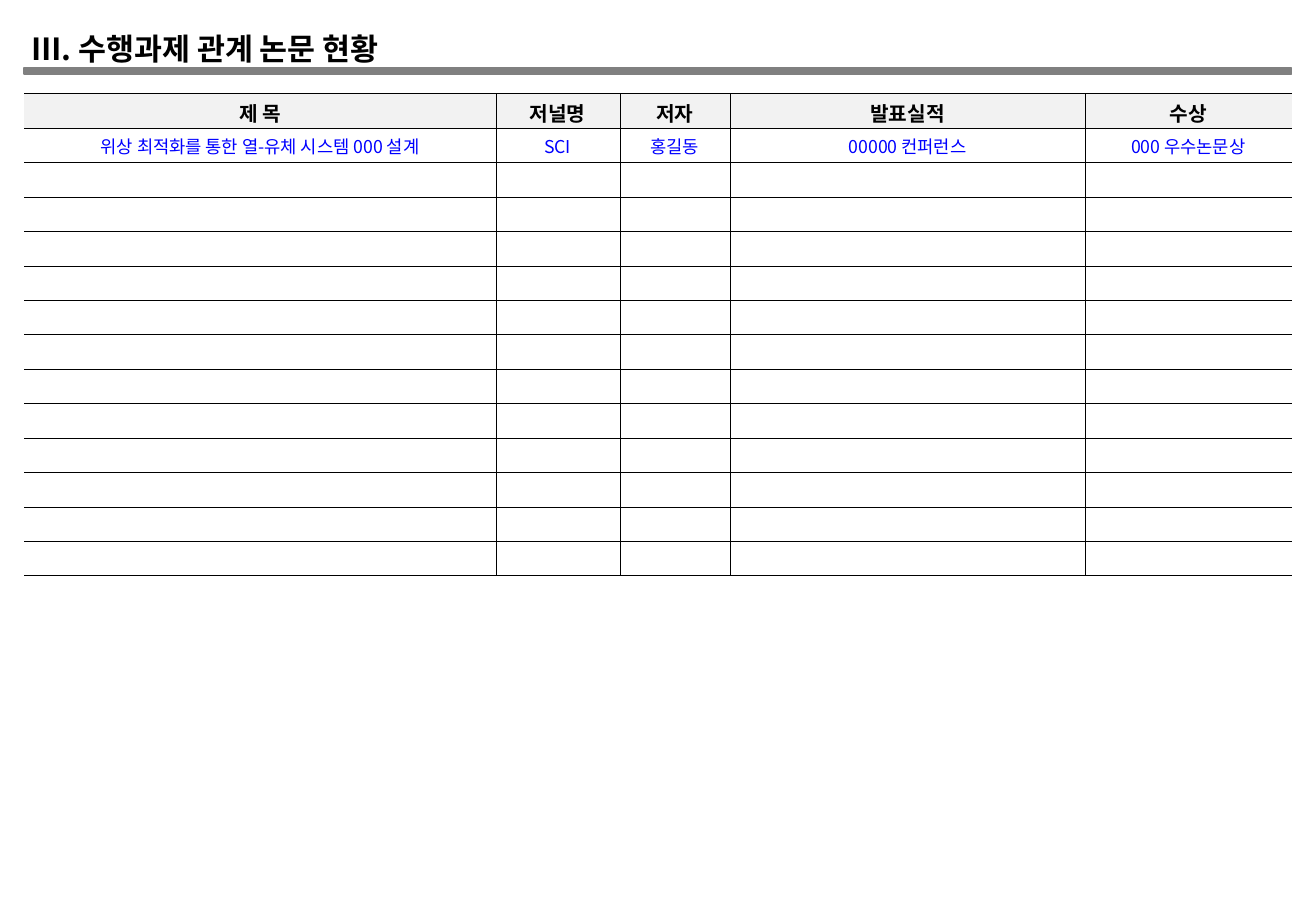
from lxml import etree
from pptx import Presentation
from pptx.dml.color import RGBColor
from pptx.enum.shapes import MSO_SHAPE
from pptx.enum.text import MSO_ANCHOR, PP_ALIGN
from pptx.oxml.ns import qn
from pptx.util import Inches, Pt

RECTANGLE = MSO_SHAPE.RECTANGLE
MIDDLE = MSO_ANCHOR.MIDDLE
CENTER = PP_ALIGN.CENTER

BLACK = RGBColor(0x00, 0x00, 0x00)
BLUE = RGBColor(0x00, 0x00, 0xFF)
GRAY = RGBColor(0x80, 0x80, 0x80)
PALE_GRAY = RGBColor(0xF2, 0xF2, 0xF2)
FONT_NAME = "Noto Sans CJK KR"

SLIDE_WIDTH, SLIDE_HEIGHT = Inches(10.83), Inches(7.5)
MARGIN = Inches(0.2)
CONTENT_WIDTH = SLIDE_WIDTH - 2 * MARGIN
HEADING_BOX = (MARGIN, Inches(0.05), CONTENT_WIDTH, Inches(0.56))
TABLE_BOX = (MARGIN, Inches(0.77), CONTENT_WIDTH, Inches(3.97))
BAR_HEIGHT = Inches(0.05)
CELL_INSET = Inches(0.04)

HEADING = "Ⅲ. 수행과제 관계 논문 현황"
HEADERS = ["제 목", "저널명", "저자", "발표실적", "수상"]
PAPERS = [["위상 최적화를 통한 열-유체 시스템 000 설계", "SCI", "홍길동",
           "00000 컨퍼런스", "000 우수논문상"]]
COLUMN_SHARES = [3.88, 1.02, 0.91, 2.92, 1.7]
ROW_COUNT = 14


def style_font(font, size, color, bold):
    font.name = FONT_NAME
    font.size = Pt(size)
    font.bold = bold
    font.color.rgb = color
    east_asian = etree.Element(qn("a:ea"), typeface=FONT_NAME)
    font._element.find(qn("a:latin")).addnext(east_asian)


def add_heading(slide, box):
    left, top, width, height = box
    bar_top = top + height - BAR_HEIGHT
    bar = slide.shapes.add_shape(RECTANGLE, left, bar_top, width, BAR_HEIGHT)
    bar.shadow.inherit = False
    bar.fill.solid()
    bar.fill.fore_color.rgb = GRAY
    bar.line.color.rgb = GRAY
    bar.line.width = Pt(1)

    title = slide.shapes.add_textbox(left - CELL_INSET, top, width, height - BAR_HEIGHT)
    title.text_frame.word_wrap = True
    paragraph = title.text_frame.paragraphs[0]
    paragraph.text = HEADING
    paragraph.line_spacing = 1.5
    style_font(paragraph.font, 18, BLACK, True)


def set_borders(cell, widths):
    properties = cell._tc.get_or_add_tcPr()
    for position, (side, width) in enumerate(widths.items()):
        line = etree.Element(qn(f"a:ln{side}"), w=str(Pt(width)))
        if width:
            fill = etree.SubElement(line, qn("a:solidFill"))
            etree.SubElement(fill, qn("a:srgbClr"), val=str(BLACK))
        else:
            etree.SubElement(line, qn("a:noFill"))
        properties.insert(position, line)


def fill_cell(cell, text, is_header):
    cell.margin_left = cell.margin_right = CELL_INSET
    cell.margin_top = cell.margin_bottom = CELL_INSET
    cell.vertical_anchor = MIDDLE
    if is_header:
        cell.fill.solid()
        cell.fill.fore_color.rgb = PALE_GRAY
    else:
        cell.fill.background()
    paragraph = cell.text_frame.paragraphs[0]
    paragraph.alignment = CENTER
    if text:
        paragraph.text = text
        paragraph.space_before = paragraph.space_after = Pt(2)
        style_font(paragraph.font, 12 if is_header else 10.5,
                   BLACK if is_header else BLUE, is_header)
    else:
        etree.SubElement(paragraph._p, qn("a:endParaRPr"), sz="1000")


def add_paper_table(slide, box):
    left, top, width, height = box
    column_count = len(HEADERS)
    table = slide.shapes.add_table(ROW_COUNT, column_count, *box).table
    table.horz_banding = False
    for column, share in zip(table.columns, COLUMN_SHARES):
        column.width = int(width * share / sum(COLUMN_SHARES))
    for row in table.rows:
        row.height = int(height / ROW_COUNT)

    blank_rows = [[""] * column_count] * (ROW_COUNT - 1 - len(PAPERS))
    for row_index, texts in enumerate([HEADERS] + PAPERS + blank_rows):
        for column_index, text in enumerate(texts):
            cell = table.cell(row_index, column_index)
            fill_cell(cell, text, row_index == 0)
            set_borders(cell, {
                "L": 0.25 if column_index else 0,
                "R": 0.25 if column_index < column_count - 1 else 0,
                "T": 0.25 if row_index else 0.75,
                "B": 0.25,
            })


def main():
    presentation = Presentation()
    presentation.slide_width = SLIDE_WIDTH
    presentation.slide_height = SLIDE_HEIGHT
    slide = presentation.slides.add_slide(presentation.slide_layouts[6])
    add_heading(slide, HEADING_BOX)
    add_paper_table(slide, TABLE_BOX)
    presentation.save("out.pptx")


if __name__ == "__main__":
    main()
